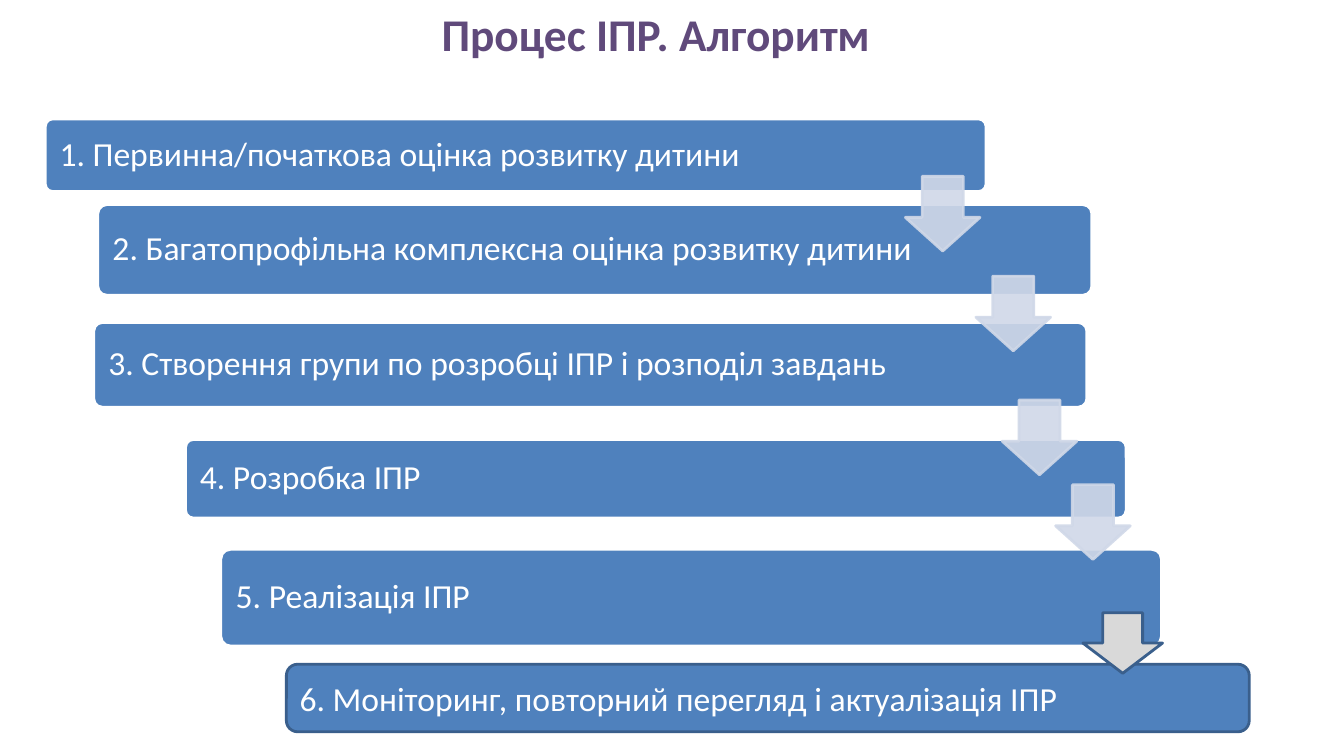
import pptx
import pptx.util
import pptx.dml.color
import pptx.enum.shapes
import pptx.enum.text
import pptx.oxml.ns
import lxml.etree

Inches = pptx.util.Inches
Shapes = pptx.enum.shapes.MSO_SHAPE
Align = pptx.enum.text.PP_ALIGN
Anchor = pptx.enum.text.MSO_ANCHOR

# Content: text, then left, top, width, height in inches
TITLE = "Процес ІПР. Алгоритм"
STEPS = [
    ("1. Первинна/початкова оцінка розвитку дитини", (0.45, 1.18, 9.33, 0.72)),
    ("2. Багатопрофільна комплексна оцінка розвитку дитини", (0.97, 2.03, 9.86, 0.9)),
    ("3. Створення групи по розробці ІПР і розподіл завдань", (0.93, 3.2, 9.85, 0.84)),
    ("4. Розробка ІПР", (1.84, 4.36, 9.33, 0.78)),
    ("5. Реалізація ІПР", (2.19, 5.45, 9.33, 0.96)),
]
LAST_STEP = ("6. Моніторинг, повторний перегляд і актуалізація ІПР", (2.84, 6.59, 9.55, 0.67))
ARROW_SIZE = 0.74
ARROW_CORNERS = [(8.98, 1.75), (9.68, 2.74), (9.94, 3.97), (10.47, 4.81)]
LAST_ARROW = (10.74, 6.08, 0.79, 0.6)

THEME = {
    "font": "Calibri", "title_size": 32.4, "step_size": 24, "line_width": 2,
    "title": "604A7B", "bar": "4F81BD", "white": "FFFFFF", "edge": "3A5F8C",
    "pale_arrow": "D0D8E8", "grey_arrow": "D9D9D9", "arrow_alpha": 90,
}


def color(name):
    return pptx.dml.color.RGBColor.from_string(THEME[name])


def add_span(para, text, size, ink, bold=False):
    span = para.add_run()
    span.text = text
    span.font.name = THEME["font"]
    span.font.size = pptx.util.Pt(THEME[size])
    span.font.bold = bold
    span.font.color.rgb = color(ink)


def add_block(page, kind, place, fill, line, adjustments=()):
    block = page.shapes.add_shape(kind, *map(Inches, place))
    block.shadow.inherit = False
    block.fill.solid()
    block.fill.fore_color.rgb = color(fill)
    block.line.color.rgb = color(line)
    block.line.width = pptx.util.Pt(THEME["line_width"])
    for index, value in enumerate(adjustments):
        block.adjustments[index] = value
    return block


def add_bar(page, text, place, line, inset, adjustments=()):
    bar = add_block(page, Shapes.ROUNDED_RECTANGLE, place, "bar", line, adjustments)
    frame = bar.text_frame
    frame.word_wrap = True
    frame.vertical_anchor = Anchor.MIDDLE
    frame.margin_left = Inches(inset)
    para = frame.paragraphs[0]
    para.alignment = Align.LEFT
    add_span(para, text, "step_size", "white")
    return para


def make_translucent(block):
    for tint in block._element.spPr.iter(pptx.oxml.ns.qn("a:srgbClr")):
        alpha = lxml.etree.SubElement(tint, pptx.oxml.ns.qn("a:alpha"))
        alpha.set("val", str(THEME["arrow_alpha"] * 1000))


def main():
    deck = pptx.Presentation()
    deck.slide_width, deck.slide_height = Inches(13.33), Inches(7.5)
    page = deck.slides.add_slide(deck.slide_layouts[5])

    # Title
    title = page.shapes.title
    title.left, title.top, title.width, title.height = map(Inches, (0.84, 0, 11.33, 0.67))
    title.text_frame.vertical_anchor = Anchor.MIDDLE
    para = title.text_frame.paragraphs[0]
    para.alignment = Align.CENTER
    add_span(para, TITLE, "title_size", "title", bold=True)

    # Steps and the pale arrows between them
    for text, place in STEPS:
        para = add_bar(page, text, place, "white", 0.12, (0.1,))
        para.line_spacing = 0.9
    for left, top in ARROW_CORNERS:
        arrow = add_block(page, Shapes.DOWN_ARROW, (left, top, ARROW_SIZE, ARROW_SIZE),
                          "pale_arrow", "pale_arrow", (0.55, 0.45))
        make_translucent(arrow)

    # Final step and its outlined arrow
    add_bar(page, *LAST_STEP, "edge", 0.1)
    add_block(page, Shapes.DOWN_ARROW, LAST_ARROW, "grey_arrow", "edge")

    deck.save("out.pptx")


if __name__ == "__main__":
    main()
